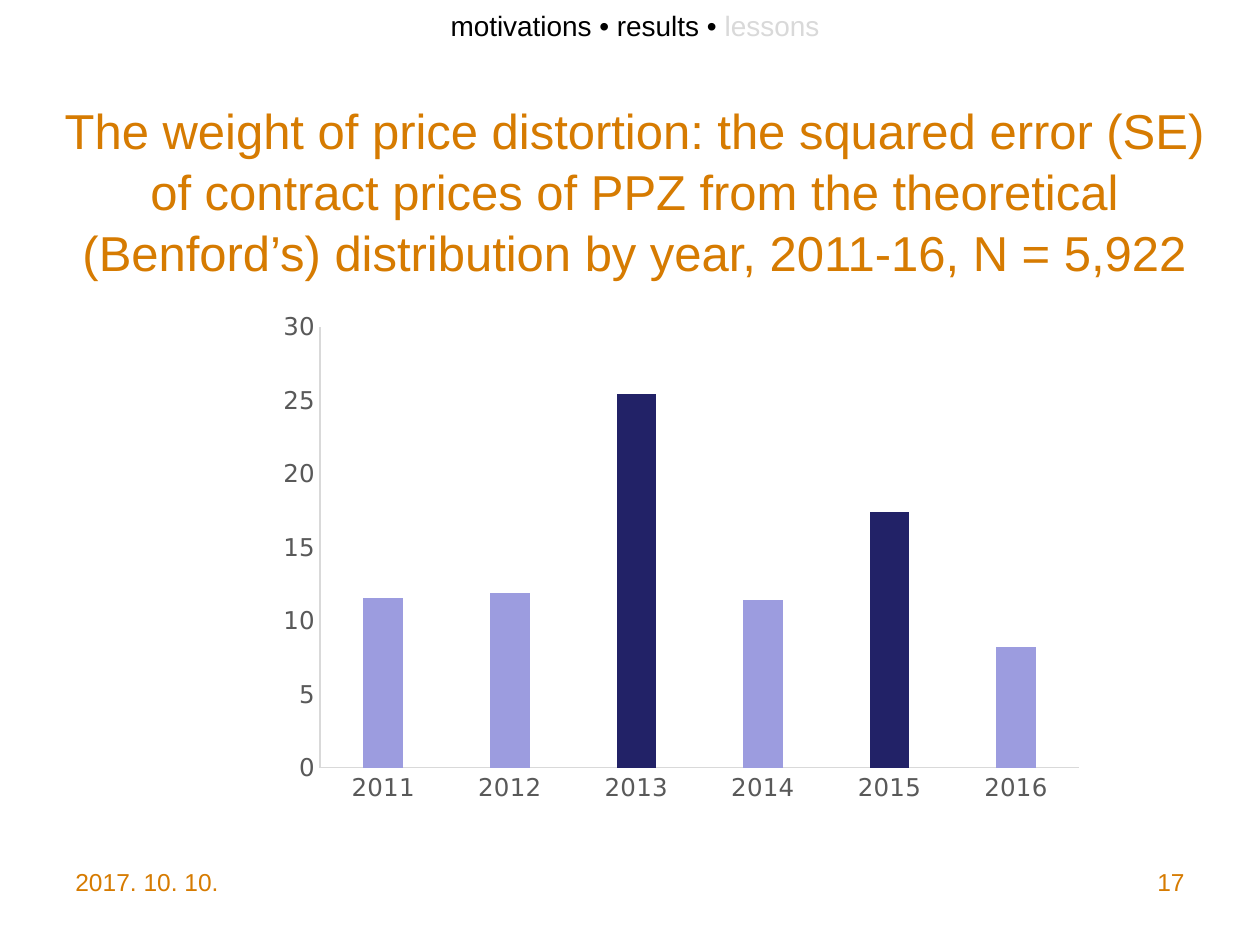
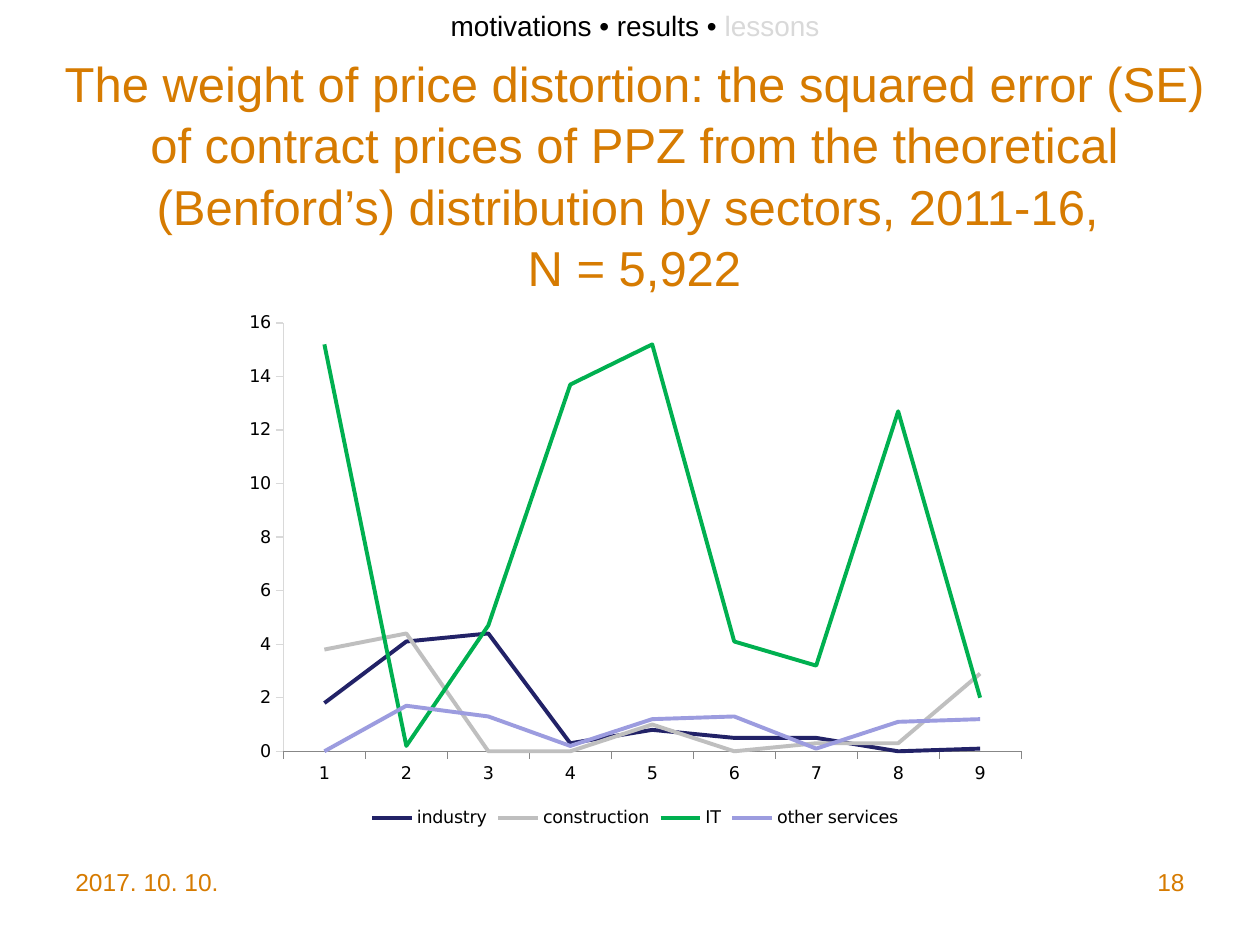
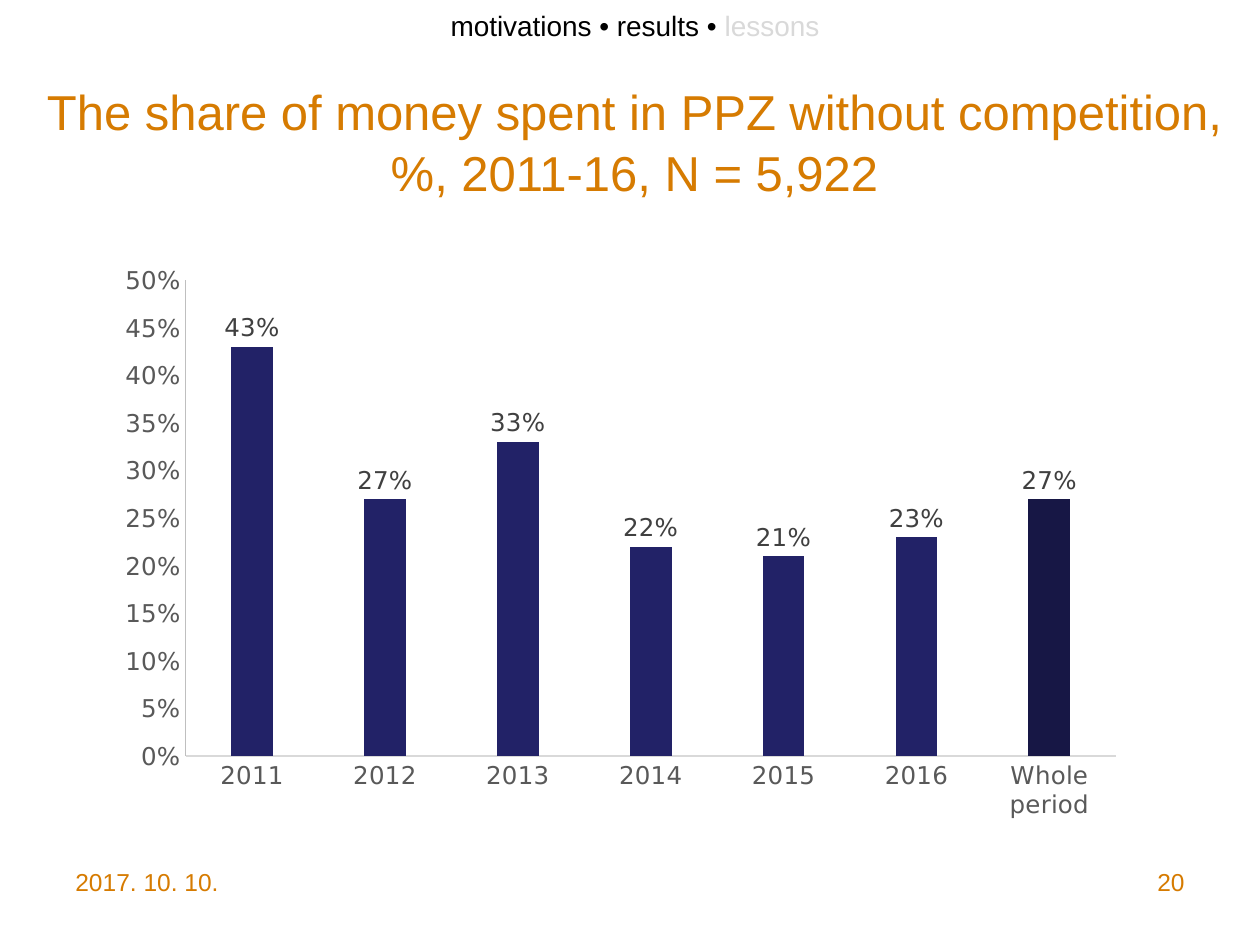
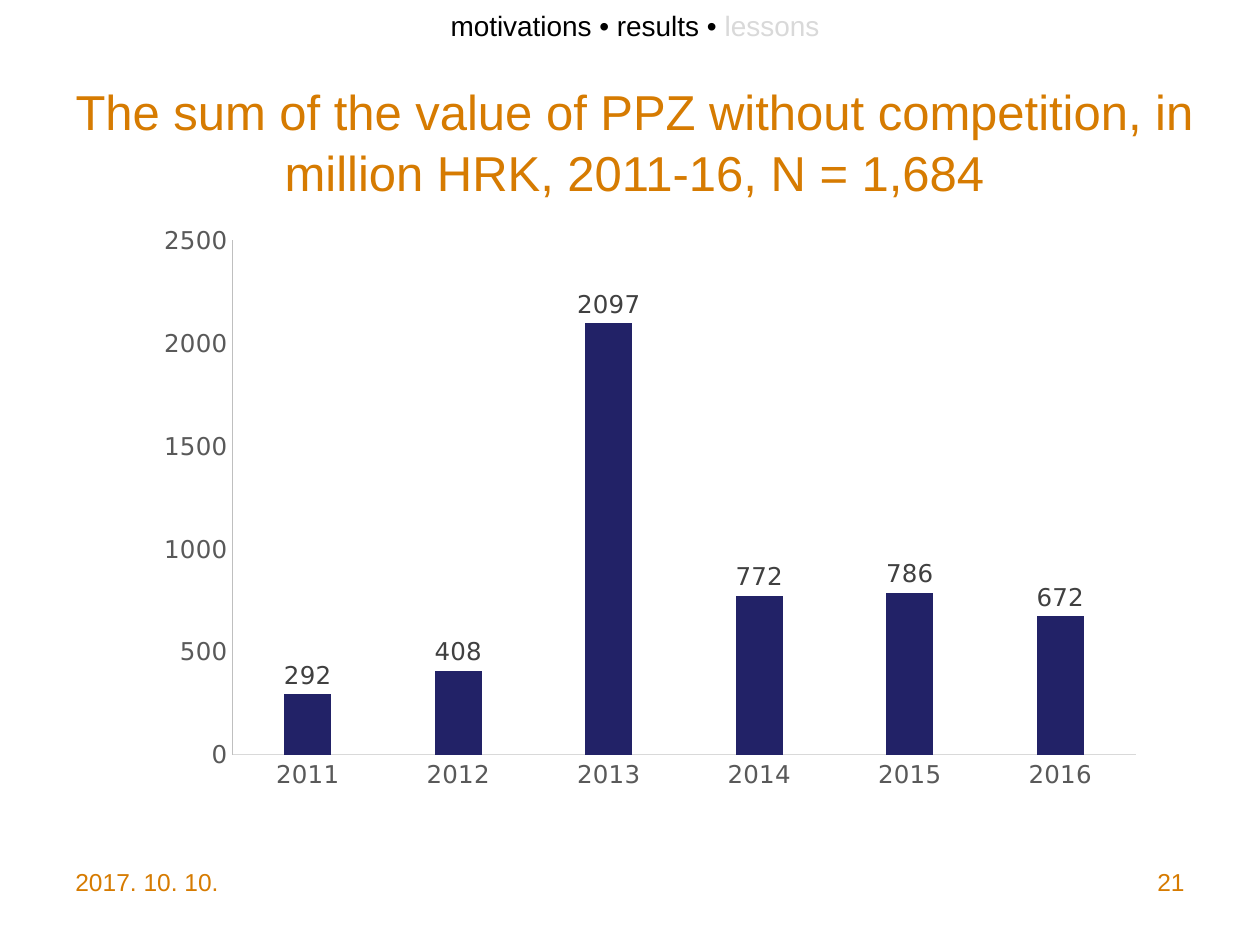
from pptx import Presentation
from pptx.chart.data import CategoryChartData
from pptx.dml.color import RGBColor
from pptx.enum.chart import XL_CHART_TYPE as ChartType
from pptx.enum.chart import XL_LABEL_POSITION as LabelPosition
from pptx.enum.chart import XL_LEGEND_POSITION as LegendPosition
from pptx.enum.chart import XL_TICK_MARK as TickMark
from pptx.enum.text import MSO_ANCHOR as Anchor
from pptx.enum.text import PP_ALIGN as Align
from pptx.oxml import parse_xml
from pptx.oxml.ns import nsdecls
from pptx.util import Cm, Pt

COLORS = {
    "accent": "D67B01",
    "text": "000000",
    "faded": "D9D9D9",
    "axis": "D9D9D9",
    "dark_axis": "BFBFBF",
    "axis_text": "595959",
    "label": "404040",
    "navy": "222267",
    "deep_navy": "171745",
    "lilac": "9C9CDF",
    "gray": "BFBFBF",
    "green": "00B050",
}
TEXT_FONT = "Arial"
CHART_FONT = "DejaVu Sans"
DATE = "2017. 10. 10."
YEARS = [str(year) for year in range(2011, 2017)]


def color(name):
    """Return the named colour."""
    return RGBColor.from_string(COLORS[name])


def set_font(font, size, color_name, name):
    """Set size, colour and typeface of a font."""
    font.size = Pt(size)
    font.name = name
    font.color.rgb = color(color_name)


def add_text(page, text, frame, size=14, ink="accent", align=Align.LEFT,
             anchor=Anchor.TOP, spacing=None, bottom=0.13, faded=""):
    """Add a text box, with an optional faded ending, and return it."""
    box = page.shapes.add_textbox(*map(Cm, frame))
    body = box.text_frame
    body.word_wrap = True
    body.vertical_anchor = anchor
    body.margin_bottom = Cm(bottom)
    para = body.paragraphs[0]
    para.alignment = align
    if spacing:
        para.line_spacing = spacing
    for number, line in enumerate(text.split("\n")):
        if number:
            para.add_line_break()
        span = para.add_run()
        span.text = line
        set_font(span.font, size, ink, TEXT_FONT)
    if faded:
        span = para.add_run()
        span.text = faded
        set_font(span.font, size, "faded", TEXT_FONT)
    return box


def add_title(page, text, height, bottom=0.13):
    """Add the slide title."""
    add_text(page, text, (0.69, 1.55, 24.2, height), size=28, align=Align.CENTER,
             anchor=Anchor.MIDDLE, spacing=1.04, bottom=bottom)


def add_footer(page, number):
    """Add the date and the slide number."""
    add_text(page, DATE, (1.27, 17.35, 5.92, 1.32))
    add_text(page, str(number), (18.21, 17.35, 5.92, 1.32), align=Align.RIGHT)


def add_progress(page):
    """Add the line that shows the current part of the talk."""
    box = add_text(page, "motivations • results • ", (0.1, 0, 25.4, 0.94), size=16,
                   ink="text", align=Align.CENTER, faded="lessons")
    box.text_frame.margin_top = Cm(0.18)


def add_chart(page, kind, frame, categories, series, size, number_format="0"):
    """Add a chart of named series and return it."""
    data = CategoryChartData(number_format=number_format)
    data.categories = categories
    for name, values in series.items():
        data.add_series(name, values)
    chart = page.shapes.add_chart(kind, *map(Cm, frame), data).chart
    chart.has_title = False
    chart.has_legend = False
    set_font(chart.font, size, "text", CHART_FONT)
    return chart


def style_axis(axis, line=None, tick=TickMark.NONE, ink=None, size=14):
    """Set line, tick marks and label font of an axis."""
    axis.has_major_gridlines = False
    axis.major_tick_mark = tick
    axis.minor_tick_mark = TickMark.NONE
    if line:
        axis.format.line.color.rgb = color(line)
        axis.format.line.width = Pt(0.75)
    if ink:
        set_font(axis.tick_labels.font, size, ink, CHART_FONT)


def scale_axis(axis, top, step, number_format="0"):
    """Set range and number format of a value axis."""
    axis.minimum_scale = 0
    axis.maximum_scale = top
    axis.major_unit = step
    axis.tick_labels.number_format = number_format
    axis.tick_labels.number_format_is_linked = False


def place_plot(chart, x, y, w, h):
    """Fix the inner plot area as fractions of the chart."""
    area = chart.element.xpath("c:chart/c:plotArea")[0]
    for old in area.xpath("c:layout"):
        area.remove(old)
    modes = '<c:xMode val="edge"/><c:yMode val="edge"/>'
    sizes = "".join(f'<c:{key} val="{value}"/>'
                    for key, value in zip("xywh", (x, y, w, h)))
    area.insert(0, parse_xml(
        f'<c:layout {nsdecls("c")}><c:manualLayout><c:layoutTarget val="inner"/>'
        f'{modes}{sizes}</c:manualLayout></c:layout>'))


def add_columns(page, frame, categories, values, top, step, fill="navy",
                highlights=None, number_format="0", value_line="dark_axis", labels=True):
    """Add a single-series column chart and return it."""
    chart = add_chart(page, ChartType.COLUMN_CLUSTERED, frame, categories,
                      {"Series 1": values}, 14, number_format)
    style_axis(chart.category_axis, "axis", ink="axis_text")
    style_axis(chart.value_axis, value_line, ink="axis_text")
    scale_axis(chart.value_axis, top, step, number_format)
    plot = chart.plots[0]
    plot.vary_by_categories = False
    plot.gap_width = 219
    plot.overlap = -27
    columns = plot.series[0]
    columns.invert_if_negative = False
    columns.format.fill.solid()
    columns.format.fill.fore_color.rgb = color(fill)
    for index, name in (highlights or {}).items():
        point_fill = columns.points[index].format.fill
        point_fill.solid()
        point_fill.fore_color.rgb = color(name)
    if labels:
        tags = columns.data_labels
        tags.show_value = True
        tags.position = LabelPosition.OUTSIDE_END
        tags.number_format = number_format
        tags.number_format_is_linked = False
        set_font(tags.font, 14, "label", CHART_FONT)
    return chart


def add_lines(page, frame, categories, series, inks, top, step):
    """Add a line chart with a legend below."""
    chart = add_chart(page, ChartType.LINE, frame, categories, series, 10)
    style_axis(chart.category_axis, tick=TickMark.OUTSIDE)
    style_axis(chart.value_axis, "axis", TickMark.OUTSIDE)
    scale_axis(chart.value_axis, top, step)
    chart.has_legend = True
    chart.legend.position = LegendPosition.BOTTOM
    chart.legend.include_in_layout = False
    chart.plots[0].vary_by_categories = False
    for curve, ink in zip(chart.plots[0].series, inks):
        curve.smooth = False
        curve.format.line.color.rgb = color(ink)
        curve.format.line.width = Pt(2.25)


def error_by_year(page):
    """Fill the slide on squared error by year."""
    add_title(page, "The weight of price distortion: the squared error (SE) of contract "
              "prices of PPZ from the theoretical (Benford’s) distribution by year, "
              "2011-16, N = 5,922", 4.57)
    chart = add_columns(page, (4.29, 5.33, 18.01, 11.4), YEARS,
                        [11.5, 11.9, 25.4, 11.4, 17.4, 8.2], 30, 5, fill="lilac",
                        highlights={2: "navy", 4: "navy"}, value_line="axis",
                        labels=False)
    place_plot(chart, 0.12, 0.11, 0.85, 0.78)


def error_by_sector(page):
    """Fill the slide on squared error by sector."""
    add_title(page, "The weight of price distortion: the squared error (SE) of contract "
              "prices of PPZ from the theoretical (Benford’s) distribution by sectors, "
              "2011-16, \nN = 5,922", 4.98, bottom=1.2)
    sectors = {
        "industry": [1.8, 4.1, 4.4, 0.3, 0.8, 0.5, 0.5, 0, 0.1],
        "construction": [3.8, 4.4, 0, 0, 1, 0, 0.3, 0.3, 2.9],
        "IT": [15.2, 0.2, 4.7, 13.7, 15.2, 4.1, 3.2, 12.7, 2],
        "other services": [0, 1.7, 1.3, 0.2, 1.2, 1.3, 0.1, 1.1, 1.2],
    }
    digits = [str(digit) for digit in range(1, 10)]
    add_lines(page, (4.7, 6.1, 16.21, 10.69), digits, sectors,
              ("navy", "gray", "green", "lilac"), 16, 2)


def share_without_competition(page):
    """Fill the slide on the share of money spent without competition."""
    add_title(page, "The share of money spent in PPZ without competition, %, 2011-16, "
              "N = 5,922", 2.57)
    add_columns(page, (2.11, 5.13, 20.8, 11.61), YEARS + ["Whole period"],
                [0.43, 0.27, 0.33, 0.22, 0.21, 0.23, 0.27], 0.5, 0.05,
                highlights={6: "deep_navy"}, number_format="0%")


def value_without_competition(page):
    """Fill the slide on the value spent without competition."""
    add_title(page, "The sum of the value of PPZ without competition, in million HRK, "
              "2011-16, N = 1,684", 2.57)
    add_columns(page, (2.9, 4.32, 20.4, 11.81), YEARS,
                [292, 408, 2097, 772, 786, 672], 2500, 500)


def main():
    """Build and save the deck."""
    deck = Presentation()
    deck.slide_width, deck.slide_height = Cm(25.4), Cm(19.05)
    pages = {17: error_by_year, 18: error_by_sector,
             20: share_without_competition, 21: value_without_competition}
    for number, fill_page in pages.items():
        page = deck.slides.add_slide(deck.slide_layouts[6])
        fill_page(page)
        add_footer(page, number)
        add_progress(page)
    deck.save("out.pptx")


if __name__ == "__main__":
    main()
